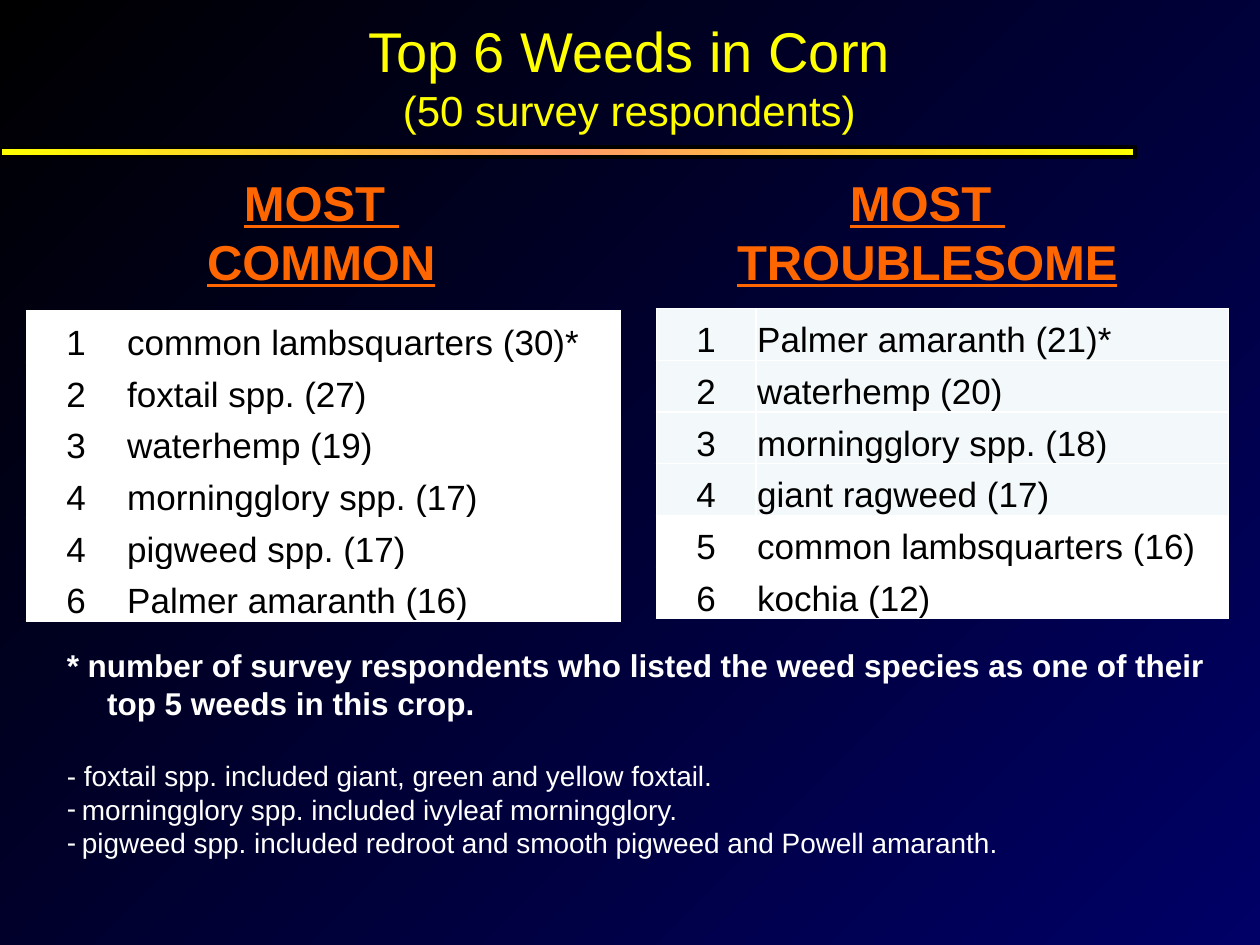
"""Build a slide that ranks the most common and most troublesome corn weeds."""
from copy import deepcopy

from lxml import etree
from pptx import Presentation
from pptx.dml.color import RGBColor
from pptx.enum.shapes import MSO_SHAPE
from pptx.enum.text import MSO_ANCHOR, MSO_AUTO_SIZE, PP_ALIGN
from pptx.oxml.ns import qn
from pptx.util import Inches, Pt

CENTER, LEFT = PP_ALIGN.CENTER, PP_ALIGN.LEFT
MIDDLE, BOTTOM, TOP = MSO_ANCHOR.MIDDLE, MSO_ANCHOR.BOTTOM, MSO_ANCHOR.TOP
RECTANGLE, NO_FIT = MSO_SHAPE.RECTANGLE, MSO_AUTO_SIZE.NONE
FONT = "Arial"
COLORS = {"black": "000000", "navy": "000066", "yellow": "FFFF00", "peach": "FF9966",
          "orange": "FF6600", "white": "FFFFFF", "pale": "F3F9FA"}

TITLE = [("Top 6 Weeds in Corn", 32), ("(50 survey respondents)", 24)]
RANKINGS = [
    {"heading": ["MOST ", "COMMON"], "heading_at": (1.35, 2.4),
     "table_at": (0.21, 2.47), "name_width": 3.92, "tinted_rows": 0,
     "weeds": [("1", "common lambsquarters (30)*"), ("2", "foxtail spp. (27)"),
               ("3", "waterhemp (19)"), ("4", "morningglory spp. (17)"),
               ("4", "pigweed spp. (17)"), ("6", "Palmer amaranth (16)")]},
    {"heading": ["MOST ", "TROUBLESOME"], "heading_at": (5.73, 3.26),
     "table_at": (5.21, 2.45), "name_width": 3.75, "tinted_rows": 4,
     "weeds": [("1", "Palmer amaranth (21)*"), ("2", "waterhemp (20)"),
               ("3", "morningglory spp. (18)"), ("4", "giant ragweed (17)"),
               ("5", "common lambsquarters (16)"), ("6", "kochia (12)")]},
]
NOTES = [
    {"text": "* number of survey respondents who listed the weed species as one of their "
             "top 5 weeds in this crop.", "size": 18, "bold": True, "indent": 0.32},
    {"text": "- foxtail spp. included giant, green and yellow foxtail.", "before": 21},
    {"text": "morningglory spp. included ivyleaf morningglory.", "bullet": "-"},
    {"text": "pigweed spp. included redroot and smooth pigweed and Powell amaranth.",
     "bullet": "-"},
]
RANK_WIDTH, ROW_HEIGHT = 0.79, 0.41


def rgb(name):
    return RGBColor.from_string(COLORS[name])


def place(shape, left, top, width, height):
    shape.left, shape.top = Inches(left), Inches(top)
    shape.width, shape.height = Inches(width), Inches(height)


def style(para, size, color, align=LEFT, bold=False, underline=False):
    para.alignment = align
    font = para.font
    font.name, font.size, font.bold, font.underline = FONT, Pt(size), bold, underline
    font.color.rgb = rgb(color)


def paragraphs(frame, count):
    return [frame.paragraphs[0]] + [frame.add_paragraph() for _ in range(count - 1)]


def set_gradient(fill, names, angle):
    fill.gradient()
    fill.gradient_angle = angle
    stop_list = fill.gradient_stops[0]._gs.getparent()
    for _ in names[2:]:
        stop_list.append(deepcopy(stop_list[0]))
    for index, (stop, name) in enumerate(zip(fill.gradient_stops, names)):
        stop.position = index / (len(names) - 1)
        stop.color.rgb = rgb(name)


def add_borders(cell):
    properties = cell._tc.get_or_add_tcPr()
    for index, side in enumerate(("lnL", "lnR", "lnT", "lnB")):
        line = etree.Element(qn(f"a:{side}"), w=str(Pt(1)))
        fill = etree.SubElement(line, qn("a:solidFill"))
        etree.SubElement(fill, qn("a:srgbClr"), val=COLORS["white"])
        properties.insert(index, line)


def add_heading(page, ranking):
    left, width = ranking["heading_at"]
    box = page.shapes.add_textbox(*map(Inches, (left, 1.32, width, 1.04)))
    frame = box.text_frame
    frame.word_wrap = True
    lines = ranking["heading"]
    for para, text in zip(paragraphs(frame, len(lines)), lines):
        para.text = text
        style(para, 28, "orange", CENTER, bold=True, underline=True)


def add_ranking(page, ranking):
    weeds, widths = ranking["weeds"], (RANK_WIDTH, ranking["name_width"])
    size = (sum(widths), ROW_HEIGHT * len(weeds))
    table = page.shapes.add_table(len(weeds), 2, *map(Inches, ranking["table_at"] + size)).table
    for column, width in zip(table.columns, widths):
        column.width = Inches(width)
    for row, weed in enumerate(weeds):
        table.rows[row].height = Inches(ROW_HEIGHT)
        for column, (text, align) in enumerate(zip(weed, (CENTER, LEFT))):
            cell = table.cell(row, column)
            cell.text = text
            cell.vertical_anchor = BOTTOM
            cell.margin_left = cell.margin_right = cell.margin_top = Inches(0.01)
            cell.margin_bottom = 0
            cell.fill.solid()
            cell.fill.fore_color.rgb = rgb("pale" if row < ranking["tinted_rows"] else "white")
            add_borders(cell)
            style(cell.text_frame.paragraphs[0], 20, "black", align)


def fill_title(title):
    place(title, 0.33, 0, 9.33, 1.2)
    frame = title.text_frame
    frame.vertical_anchor, frame.auto_size = MIDDLE, NO_FIT
    for para, (text, size) in zip(paragraphs(frame, len(TITLE)), TITLE):
        para.text = text
        style(para, size, "yellow", CENTER)


def fill_notes(body):
    place(body, 0.43, 5.08, 9.25, 1.82)
    frame = body.text_frame
    frame.vertical_anchor, frame.auto_size = TOP, NO_FIT
    for para, note in zip(paragraphs(frame, len(NOTES)), NOTES):
        para.text = note["text"]
        style(para, note.get("size", 16), "white", bold=note.get("bold", False))
        para.space_before = Pt(note.get("before", 0))
        properties = para._p.get_or_add_pPr()
        indent = Inches(note.get("indent", 0.12))
        properties.set("marL", str(indent))
        properties.set("indent", str(-indent))
        if "bullet" in note:
            bullet = etree.Element(qn("a:buChar"), char=note["bullet"])
        else:
            bullet = etree.Element(qn("a:buNone"))
        properties.find(qn("a:spcBef")).addnext(bullet)


def add_rule(page):
    rule = page.shapes.add_shape(RECTANGLE, *map(Inches, (0, 1.17, 9.01, 0.08)))
    rule.shadow.inherit = False
    set_gradient(rule.fill, ("yellow", "peach", "yellow"), 0)
    rule.line.color.rgb = rgb("black")
    rule.line.width = Pt(2.25)


def main():
    deck = Presentation()
    deck.slide_width, deck.slide_height = Inches(10), Inches(7.5)
    page = deck.slides.add_slide(deck.slide_layouts[1])
    set_gradient(page.background.fill, ("black", "navy"), 315)
    fill_title(page.shapes.title)
    add_rule(page)
    for ranking in RANKINGS:
        add_heading(page, ranking)
        add_ranking(page, ranking)
    fill_notes(page.placeholders[1])
    deck.save("out.pptx")


if __name__ == "__main__":
    main()
